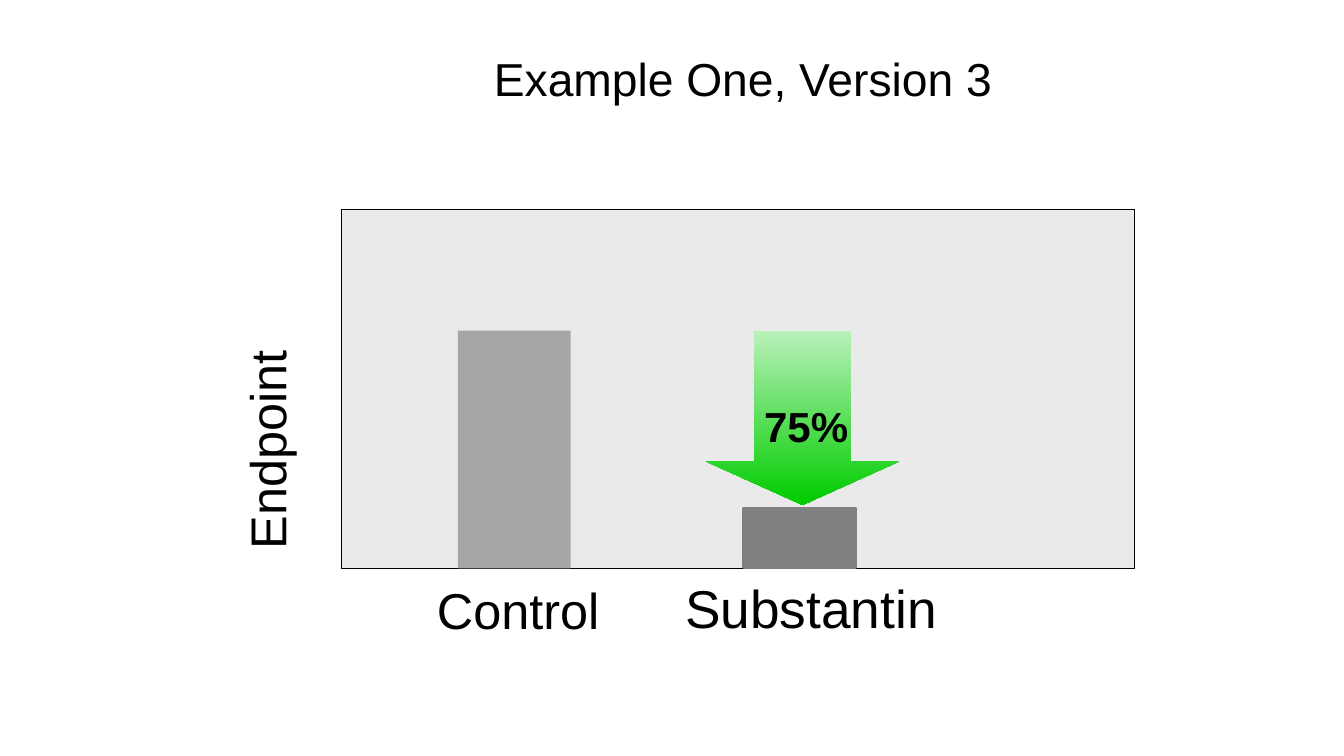
"""Build the Control versus Substantin endpoint slide."""
from dataclasses import dataclass
from typing import Optional

from lxml import etree
from pptx import Presentation
from pptx.dml.color import RGBColor
from pptx.enum import shapes, text
from pptx.oxml import ns
from pptx.shapes.autoshape import Shape
from pptx.slide import Slide
from pptx.util import Inches, Pt

BLACK = RGBColor(0x00, 0x00, 0x00)
PANEL_GRAY = RGBColor(0xEA, 0xEA, 0xEA)
CONTROL_GRAY = RGBColor(0xA6, 0xA6, 0xA6)
TREATED_GRAY = RGBColor(0x80, 0x80, 0x80)
PALE_GREEN = RGBColor(0xB9, 0xF1, 0xB9)
GREEN = RGBColor(0x00, 0xCC, 0x00)
FONT = "Arial"

Frame = tuple[float, float, float, float]


@dataclass(frozen=True)
class Block:
    frame: Frame
    fill: RGBColor
    line: Optional[RGBColor] = None
    line_width: float = 1


@dataclass(frozen=True)
class Label:
    words: str
    frame: Frame
    size: float
    bold: bool = False
    centered: bool = True
    padded: bool = True
    wrap: bool = True
    middle: bool = False
    rotation: float = 0
    line_spacing: Optional[float] = None
    percent_before: int = 0


PANEL = Block((3.39, 2.08, 7.86, 3.56), PANEL_GRAY, BLACK)
BARS = (
    Block((4.54, 3.28, 1.12, 2.36), CONTROL_GRAY),
    Block((7.37, 5.04, 1.12, 0.59), TREATED_GRAY, TREATED_GRAY, 2),
)
ARROW_FRAME: Frame = (7, 3.28, 1.92, 1.73)
LABELS = (
    Label("Substantin", (6.42, 5.75, 3.25, 0.61), 38, padded=False, line_spacing=0.95),
    Label("Endpoint", (0.76, 3.31, 3.77, 0.71), 36, centered=False, rotation=270,
          percent_before=50),
    Label("75%", (7.12, 3.92, 1.75, 0.6), 30, bold=True, percent_before=50),
    Label("Control", (4.01, 5.74, 2.26, 0.61), 36, padded=False),
    Label("Example One, Version 3", (4.8, 0.44, 5.19, 0.66), 33, centered=False,
          wrap=False, middle=True),
)


def add_preset(page: Slide, kind: shapes.MSO_SHAPE, frame: Frame) -> Shape:
    """Add a preset shape without shadow or outline."""
    shape = page.shapes.add_shape(kind, *map(Inches, frame))
    shape.shadow.inherit = False
    shape.line.fill.background()
    return shape


def add_block(page: Slide, block: Block) -> None:
    """Add a solid rectangle."""
    shape = add_preset(page, shapes.MSO_SHAPE.RECTANGLE, block.frame)
    shape.fill.solid()
    shape.fill.fore_color.rgb = block.fill
    if block.line is not None:
        shape.line.color.rgb = block.line
        shape.line.width = Pt(block.line_width)


def add_drop_arrow(page: Slide) -> None:
    """Add the green arrow that shows the reduction."""
    arrow = add_preset(page, shapes.MSO_SHAPE.DOWN_ARROW, ARROW_FRAME)
    arrow.adjustments[0] = 0.5
    arrow.adjustments[1] = 0.25
    arrow.fill.gradient()
    arrow.fill.gradient_angle = 270
    for stop, position, color in zip(arrow.fill.gradient_stops, (0, 1), (PALE_GREEN, GREEN)):
        stop.position = position
        stop.color.rgb = color


def add_label(page: Slide, label: Label) -> None:
    """Add a one-line text box."""
    box = page.shapes.add_textbox(*map(Inches, label.frame))
    box.rotation = label.rotation
    frame = box.text_frame
    frame.word_wrap = label.wrap
    frame.auto_size = text.MSO_AUTO_SIZE.SHAPE_TO_FIT_TEXT
    if label.middle:
        frame.vertical_anchor = text.MSO_ANCHOR.MIDDLE
    if not label.padded:
        frame.margin_left = frame.margin_right = 0
        frame.margin_top = frame.margin_bottom = 0
    para = frame.paragraphs[0]
    para.alignment = text.PP_ALIGN.CENTER if label.centered else text.PP_ALIGN.LEFT
    para.line_spacing = label.line_spacing
    if label.percent_before:
        before = etree.SubElement(para._p.get_or_add_pPr(), ns.qn("a:spcBef"))
        percent = etree.SubElement(before, ns.qn("a:spcPct"))
        percent.set("val", str(label.percent_before * 1000))
    span = para.add_run()
    span.text = label.words
    span.font.name = FONT
    span.font.size = Pt(label.size)
    span.font.bold = label.bold
    span.font.color.rgb = BLACK


def main() -> None:
    """Build and save the deck."""
    deck = Presentation()
    deck.slide_width, deck.slide_height = Inches(13.33), Inches(7.5)
    page = deck.slides.add_slide(deck.slide_layouts[6])
    add_block(page, PANEL)
    add_drop_arrow(page)
    for label in LABELS:
        add_label(page, label)
    for bar in BARS:
        add_block(page, bar)
    deck.save("out.pptx")


if __name__ == "__main__":
    main()
